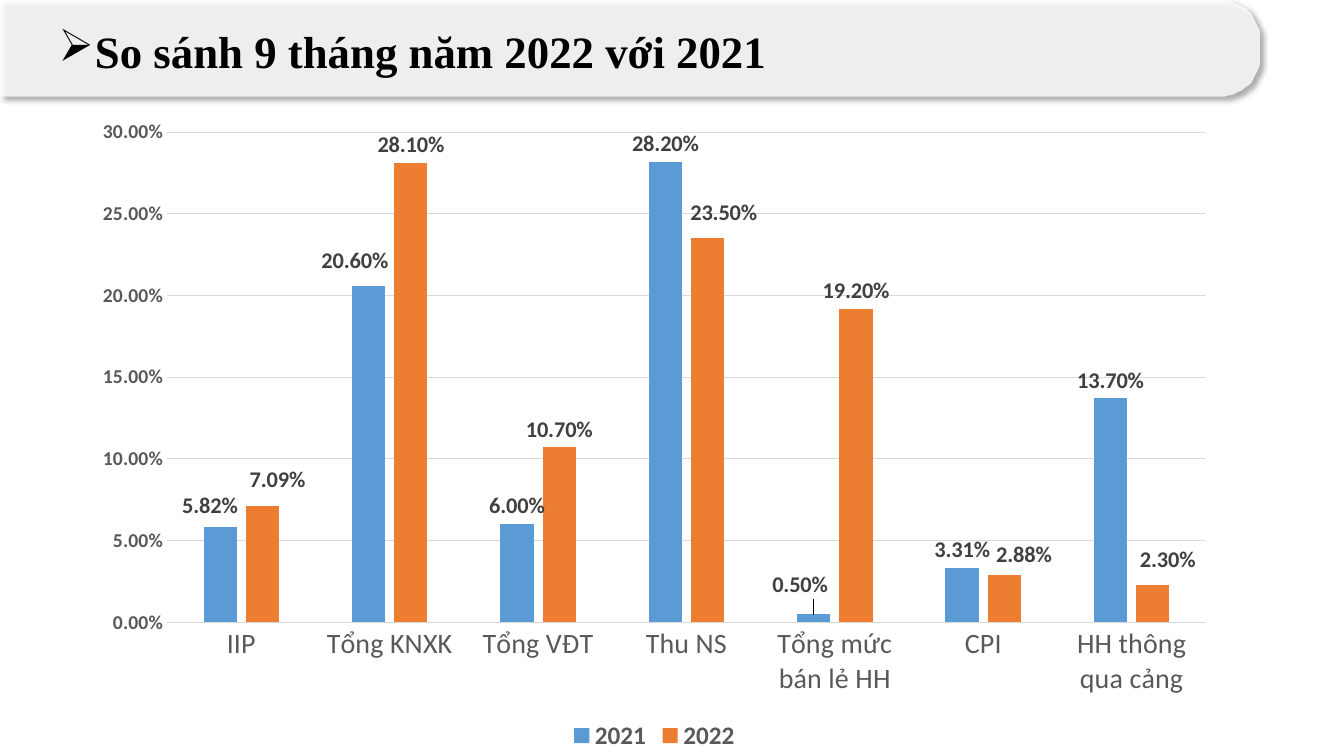
from math import cos, radians, sin

from lxml import etree
from pptx import Presentation
from pptx.chart.data import CategoryChartData
from pptx.dml.color import RGBColor
from pptx.enum.chart import XL_CHART_TYPE, XL_LABEL_POSITION, XL_LEGEND_POSITION, XL_TICK_MARK
from pptx.enum.text import MSO_ANCHOR, MSO_AUTO_SIZE, PP_ALIGN
from pptx.oxml import parse_xml
from pptx.oxml.ns import nsdecls, qn
from pptx.util import Pt

COLUMNS = XL_CHART_TYPE.COLUMN_CLUSTERED
OUTSIDE_END = XL_LABEL_POSITION.OUTSIDE_END
LEGEND_BOTTOM = XL_LEGEND_POSITION.BOTTOM
NO_TICK = XL_TICK_MARK.NONE
MIDDLE = MSO_ANCHOR.MIDDLE
FIXED_SIZE = MSO_AUTO_SIZE.NONE
JUSTIFY = PP_ALIGN.JUSTIFY

PERCENT = "0.00%"
GREY, GRID, LABEL = "595959", "D9D9D9", "404040"
INDICATORS = ["IIP", "Tổng KNXK", "Tổng VĐT", "Thu NS", "Tổng mức bán lẻ HH",
              "CPI", "HH thông qua cảng"]
# Year, colour, values, and label shifts as fractions of the chart size
YEARS = [
    ("2021", "5B9BD5", [0.0582, 0.206, 0.06, 0.282, 0.005, 0.0331, 0.137],
     {0: (-0.009, -0.005), 1: (-0.012, -0.011), 4: (-0.012, -0.017)}),
    ("2022", "ED7D31", [0.0709, 0.281, 0.107, 0.235, 0.192, 0.0288, 0.023],
     {0: (0.013, -0.014), 3: (0.014, -0.011), 5: (0.017, -0.003), 6: (0.013, -0.011)}),
]


def rgb(hex_colour):
    return RGBColor.from_string(hex_colour)


def style_font(font, size, colour, bold=False, name="Calibri"):
    font.name, font.size, font.bold = name, Pt(size), bold
    font.color.rgb = rgb(colour)


def manual_layout(**settings):
    items = "".join(f'<c:{tag} val="{value}"/>' for tag, value in settings.items())
    return parse_xml(f'<c:layout {nsdecls("c")}><c:manualLayout>{items}'
                     '</c:manualLayout></c:layout>')


def add_band(slide, width, height, radius):
    """Header band with rounded right corners and a soft shadow."""
    def corner(centre_y, start):
        return [(width - radius + radius * cos(radians(a)), centre_y + radius * sin(radians(a)))
                for a in range(start, start + 91, 5)]

    outline = corner(radius, -90) + corner(height - radius, 0) + [(0, height)]
    builder = slide.shapes.build_freeform(0, 0, scale=Pt(1))
    builder.add_line_segments(outline, close=True)
    band = builder.convert_to_shape()
    band.fill.solid()
    band.fill.fore_color.rgb = rgb("FFFFFF")
    band.line.fill.background()
    # Transparency and shadow
    properties = band._element.spPr
    white = properties.find(qn("a:solidFill"))[0]
    etree.SubElement(white, qn("a:alpha")).set("val", "80000")
    properties.append(parse_xml(
        f'<a:effectLst {nsdecls("a")}><a:outerShdw blurRad="{Pt(4)}" dist="{Pt(3)}" '
        'dir="2700000" algn="tl" rotWithShape="0"><a:srgbClr val="000000">'
        '<a:alpha val="40000"/></a:srgbClr></a:outerShdw></a:effectLst>'))


def set_title(slide, text):
    title = slide.shapes.title
    title.left, title.top, title.width, title.height = Pt(34.6), Pt(13), Pt(600), Pt(46)
    frame = title.text_frame
    frame.text = text
    frame.auto_size, frame.vertical_anchor, frame.word_wrap = FIXED_SIZE, MIDDLE, True
    heading = frame.paragraphs[0]
    heading.alignment = JUSTIFY
    style_font(heading.runs[0].font, 32, "000000", True, "Times New Roman")
    # Arrow bullet with hanging indent
    properties = heading._p.get_or_add_pPr()
    properties.set("marL", str(Pt(26)))
    properties.set("indent", str(-Pt(26)))
    etree.SubElement(properties, qn("a:buChar")).set("char", "➢")
    # The title lies above the band
    slide.shapes._spTree.append(title._element)


def style_axes(chart):
    category_axis, value_axis = chart.category_axis, chart.value_axis
    for axis in (category_axis, value_axis):
        axis.major_tick_mark = axis.minor_tick_mark = NO_TICK
    style_font(category_axis.tick_labels.font, 20, GREY)
    style_font(value_axis.tick_labels.font, 14, GREY, True)
    value_axis.minimum_scale, value_axis.maximum_scale, value_axis.major_unit = 0, 0.3, 0.05
    value_axis.tick_labels.number_format = PERCENT
    value_axis.tick_labels.number_format_is_linked = False
    value_axis.format.line.fill.background()
    for line in (category_axis.format.line, value_axis.major_gridlines.format.line):
        line.color.rgb, line.width = rgb(GRID), Pt(0.75)


def style_series(series, colour, shifts):
    series.format.fill.solid()
    series.format.fill.fore_color.rgb = rgb(colour)
    series.invert_if_negative = False
    labels = series.data_labels
    labels.show_value, labels.position = True, OUTSIDE_END
    labels.number_format, labels.number_format_is_linked = PERCENT, False
    style_font(labels.font, 16, LABEL, True)
    # Labels moved away from neighbouring bars
    for index, (x, y) in shifts.items():
        label = series.points[index].data_label
        style_font(label.font, 16, LABEL, True)
        label.position = OUTSIDE_END
        position = series._element.xpath(f'c:dLbls/c:dLbl/c:idx[@val="{index}"]')[0]
        position.addnext(manual_layout(x=x, y=y))


def add_comparison_chart(slide):
    data = CategoryChartData(number_format=PERCENT)
    data.categories = INDICATORS
    for year, _, values, _ in YEARS:
        data.add_series(year, values)
    chart = slide.shapes.add_chart(COLUMNS, Pt(57), Pt(76.3), Pt(820.8), Pt(463.7), data).chart
    style_font(chart.font, 10, "000000")
    chart.has_title = False
    chart.has_legend = True
    chart.legend.position, chart.legend.include_in_layout = LEGEND_BOTTOM, False
    style_font(chart.legend.font, 18, GREY, True)
    style_axes(chart)
    plot = chart.plots[0]
    plot.gap_width, plot.overlap, plot.vary_by_categories = 219, -27, False
    for series, (_, colour, _, shifts) in zip(plot.series, YEARS):
        style_series(series, colour, shifts)
    # Plot area inside the chart frame
    area = chart._chartSpace.chart.plotArea
    for layout in area.findall(qn("c:layout")):
        area.remove(layout)
    area.insert(0, manual_layout(layoutTarget="inner", xMode="edge", yMode="edge",
                                 x=0.076, y=0.039, w=0.904, h=0.755))


def main():
    deck = Presentation()
    deck.slide_width, deck.slide_height = Pt(960), Pt(540)
    slide = deck.slides.add_slide(deck.slide_layouts[5])
    add_comparison_chart(slide)
    add_band(slide, 900, 68.7, 27)
    set_title(slide, "So sánh 9 tháng năm 2022 với 2021")
    deck.save("out.pptx")


if __name__ == "__main__":
    main()
